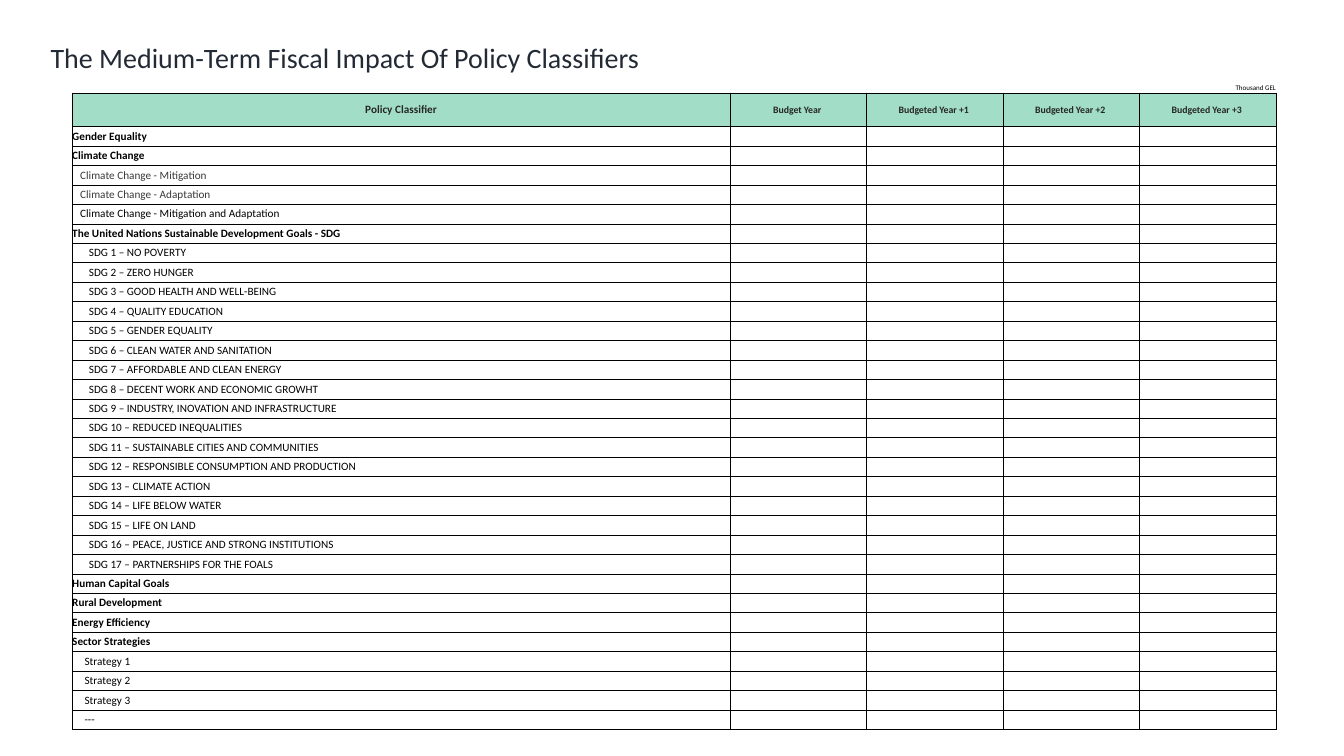
import pptx
import pptx.dml.color
import pptx.enum.text
import pptx.util
from dataclasses import dataclass
from lxml import etree
from pptx.util import Cm

TITLE = "The Medium-Term Fiscal Impact Of Policy Classifiers"
UNIT = "Thousand GEL"
HEADERS = ["Policy Classifier", "Budget Year ", "Budgeted Year +1 ",
           "Budgeted Year +2 ", "Budgeted Year +3 "]
GOALS = [
    "NO POVERTY", "ZERO HUNGER", "GOOD HEALTH AND WELL-BEING",
    "QUALITY EDUCATION", "GENDER EQUALITY", "CLEAN WATER AND SANITATION",
    "AFFORDABLE AND CLEAN ENERGY", "DECENT WORK AND ECONOMIC GROWHT",
    "INDUSTRY, INOVATION AND INFRASTRUCTURE", "REDUCED INEQUALITIES",
    "SUSTAINABLE CITIES AND COMMUNITIES",
    "RESPONSIBLE CONSUMPTION AND PRODUCTION", "CLIMATE ACTION",
    "LIFE BELOW WATER", "LIFE ON LAND",
    "PEACE, JUSTICE AND STRONG INSTITUTIONS", "PARTNERSHIPS FOR THE FOALS",
]
CLASSIFIERS = [
    ("Gender Equality", "group"),
    ("Climate Change", "group"),
    ("Climate Change - Mitigation", "climate"),
    ("Climate Change - Adaptation", "climate"),
    ("Climate Change - Mitigation and Adaptation", "combined"),
    ("The United Nations Sustainable Development Goals - SDG", "group"),
    *[(f"SDG {n} – {goal}", "goal") for n, goal in enumerate(GOALS, 1)],
    ("Human Capital Goals", "group"),
    ("Rural Development", "group"),
    ("Energy Efficiency", "group"),
    ("Sector Strategies", "group"),
    ("Strategy 1", "strategy"),
    ("Strategy 2", "strategy"),
    ("Strategy 3", "strategy"),
    ("---", "strategy"),
]


@dataclass(frozen=True)
class Theme:
    font: str = "Calibri"
    title: str = "222A35"
    header: str = "262626"
    muted: str = "3B3838"
    text: str = "000000"
    paper: str = "FFFFFF"
    mint: str = "A2DEC7"
    title_size: int = 20
    body_size: int = 8
    year_size: int = 7
    unit_size: int = 5
    border: float = 0.5


T = Theme()
ALIGN = pptx.enum.text.PP_ALIGN
MIDDLE = pptx.enum.text.MSO_ANCHOR.MIDDLE
BOTTOM = pptx.enum.text.MSO_ANCHOR.BOTTOM
LEVELS = {
    "group": dict(indent=0, bold=True),
    "climate": dict(indent=0.2, color=T.muted),
    "combined": dict(indent=0.2),
    "goal": dict(indent=0.42),
    "strategy": dict(indent=0.31),
}
COL_WIDTHS = [16.58] + [3.44] * 4
UNIT_HEIGHT, HEADER_HEIGHT, BODY_HEIGHT = 0.33, 0.85, 15.22
ROW_HEIGHTS = [UNIT_HEIGHT, HEADER_HEIGHT]
ROW_HEIGHTS += [BODY_HEIGHT / len(CLASSIFIERS)] * len(CLASSIFIERS)


def rgb(value):
    return pptx.dml.color.RGBColor.from_string(value)


def write(tf, text, size=T.body_size, color=T.text, bold=False,
          align=ALIGN.LEFT, spacing=1.0):
    p = tf.paragraphs[0]
    p.alignment = align
    p.line_spacing = spacing
    if not text:
        end = etree.SubElement(p._p, pptx.oxml.ns.qn("a:endParaRPr"))
        end.set("sz", str(size * 100))
        return
    r = p.add_run()
    r.text = text
    r.font.name = T.font
    r.font.size = pptx.util.Pt(size)
    r.font.bold = bold
    r.font.color.rgb = rgb(color)


def draw_borders(cell, visible):
    qn = pptx.oxml.ns.qn
    tc_pr = cell._tc.get_or_add_tcPr()
    for side in "LRTB":
        line = etree.SubElement(tc_pr, qn(f"a:ln{side}"))
        line.set("w", str(pptx.util.Pt(T.border)))
        if side in visible:
            fill = etree.SubElement(line, qn("a:solidFill"))
            etree.SubElement(fill, qn("a:srgbClr")).set("val", T.text)
        else:
            etree.SubElement(line, qn("a:noFill"))


def format_cell(cell, text="", fill=None, borders="LRTB", anchor=MIDDLE,
                indent=0, **fmt):
    cell.margin_left = Cm(indent)
    cell.margin_right = cell.margin_top = cell.margin_bottom = 0
    cell.vertical_anchor = anchor
    draw_borders(cell, borders)
    if fill:
        cell.fill.solid()
        cell.fill.fore_color.rgb = rgb(fill)
    else:
        cell.fill.background()
    write(cell.text_frame, text, **fmt)


def add_title(s):
    sp = s.shapes.title
    sp.left, sp.top, sp.width, sp.height = Cm(1.02), Cm(0.56), Cm(30.94), Cm(1.85)
    tf = sp.text_frame
    tf.word_wrap = True
    tf.vertical_anchor = MIDDLE
    write(tf, TITLE, size=T.title_size, color=T.title, spacing=0.9)


def add_classifier_table(s):
    frame = s.shapes.add_table(len(ROW_HEIGHTS), len(COL_WIDTHS), Cm(1.82), Cm(2.01),
                               Cm(sum(COL_WIDTHS)), Cm(sum(ROW_HEIGHTS)))
    table = frame.table
    table.first_row = table.horz_banding = False
    for column, width in zip(table.columns, COL_WIDTHS):
        column.width = Cm(width)
    for row, height in zip(table.rows, ROW_HEIGHTS):
        row.height = Cm(height)

    table.cell(0, 3).merge(table.cell(0, 4))
    for c, header in enumerate(HEADERS):
        format_cell(table.cell(0, c), UNIT if c == 3 else "", fill=T.paper,
                    borders="B", anchor=BOTTOM, size=T.unit_size, align=ALIGN.RIGHT)
        format_cell(table.cell(1, c), header, fill=T.mint,
                    size=T.year_size if c else T.body_size,
                    color=T.header, bold=True, align=ALIGN.CENTER)
    for i, (name, level) in enumerate(CLASSIFIERS, 2):
        format_cell(table.cell(i, 0), name, **LEVELS[level])
        for c in range(1, len(HEADERS)):
            format_cell(table.cell(i, c))


def main():
    prs = pptx.Presentation()
    prs.slide_width, prs.slide_height = Cm(33.87), Cm(19.05)
    s = prs.slides.add_slide(prs.slide_layouts.get_by_name("Title Only"))
    add_title(s)
    add_classifier_table(s)
    prs.save("out.pptx")


if __name__ == "__main__":
    main()
